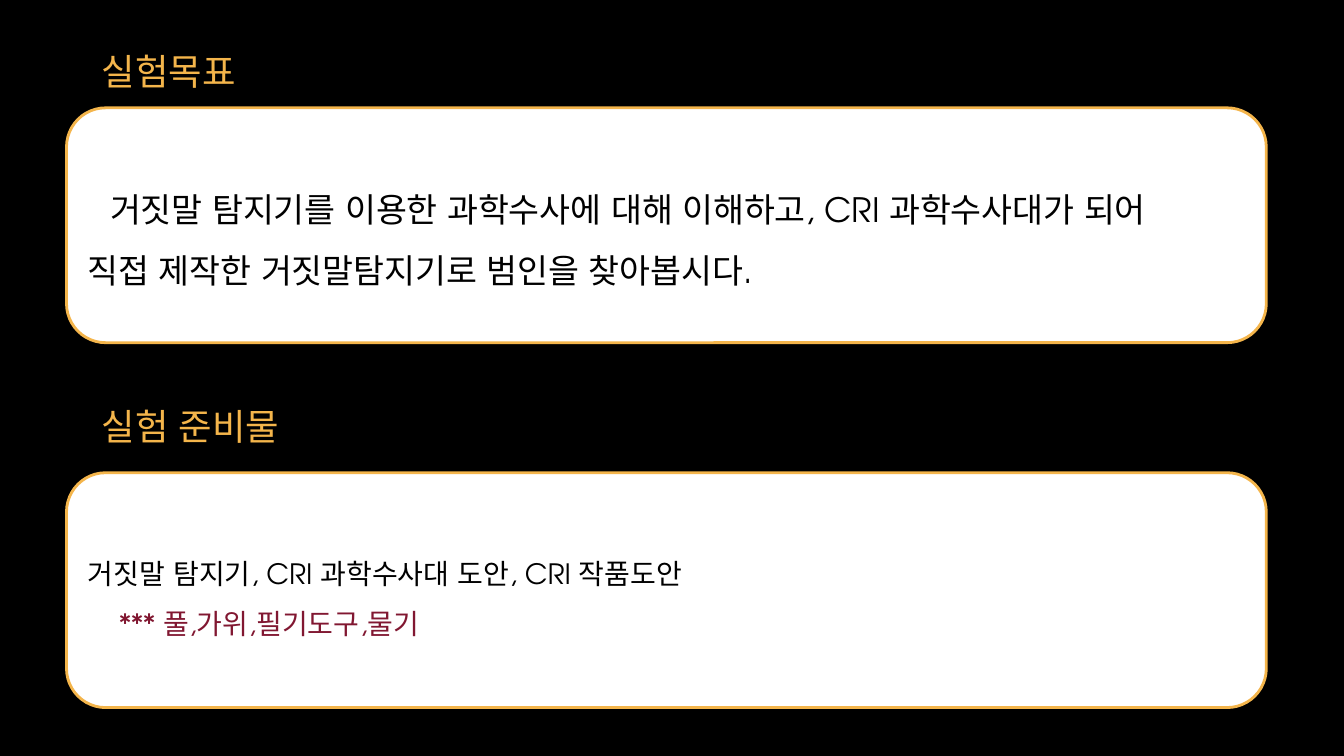
from lxml import etree
from pptx import Presentation
from pptx import util as u
from pptx.dml.color import RGBColor
from pptx.enum import shapes, text
from pptx.oxml.ns import qn

GOLD, WHITE, BLACK, WINE = "F4B54B", "FFFFFF", "000000", "811731"


def colour(value):
    return RGBColor.from_string(value)


def add_text(para, words, size=20, tint=BLACK, font="TeX Gyre Adventor",
             spacing=1.0, indent=0):
    """Write words into a paragraph; a newline becomes a line break."""
    para.alignment = text.PP_ALIGN.LEFT
    para.line_spacing = spacing
    if indent:
        para._p.get_or_add_pPr().set("indent", str(u.Inches(indent)))
    for number, line in enumerate(words.split("\n")):
        if number:
            para.add_line_break()
        span = para.add_run()
        span.text = line
        span.font.size = u.Pt(size)
        span.font.name = font
        span.font.color.rgb = colour(tint)
        # Korean letters use the same font setting
        east = etree.SubElement(span.font._element, qn("a:ea"))
        east.set("typeface", font)


class Slide:
    """Holds the slide's style and its current page."""
    left, width, height = 0.66, 11.9, 2.33

    def __init__(self, deck):
        self.page = deck.slides.add_slide(deck.slide_layouts[5])
        self.page.background.fill.solid()
        self.page.background.fill.fore_color.rgb = colour(BLACK)

    def heading(self, words, top, width, title=False):
        place = [u.Inches(n) for n in (0.91, top, width, 0.48)]
        if title:
            box = self.page.shapes.title
            box.left, box.top, box.width, box.height = place
        else:
            box = self.page.shapes.add_textbox(*place)
        frame = box.text_frame
        frame.word_wrap = True
        frame.auto_size = text.MSO_AUTO_SIZE.NONE
        frame.vertical_anchor = text.MSO_ANCHOR.TOP
        frame.margin_left = frame.margin_right = u.Inches(0.1)
        frame.margin_top = frame.margin_bottom = u.Inches(0.1)
        add_text(frame.paragraphs[0], words, size=26, tint=GOLD)

    def panel(self, top, lines, inset=0.05):
        box = self.page.shapes.add_shape(
            shapes.MSO_SHAPE.ROUNDED_RECTANGLE, u.Inches(self.left),
            u.Inches(top), u.Inches(self.width), u.Inches(self.height))
        box.shadow.inherit = False
        box.fill.solid()
        box.fill.fore_color.rgb = colour(WHITE)
        box.line.color.rgb = colour(GOLD)
        box.line.width = u.Pt(2)
        frame = box.text_frame
        frame.word_wrap = True
        frame.vertical_anchor = text.MSO_ANCHOR.MIDDLE
        frame.margin_top = u.Inches(inset)
        for number, (words, style) in enumerate(lines):
            para = frame.add_paragraph() if number else frame.paragraphs[0]
            add_text(para, words, spacing=1.5, **style)


def main():
    deck = Presentation()
    deck.slide_width, deck.slide_height = u.Inches(13.33), u.Inches(7.5)
    slide = Slide(deck)

    # Goal of the experiment
    slide.heading("실험목표", 0.39, 1.96, title=True)
    goal = ("거짓말 탐지기를 이용한 과학수사에 대해 이해하고, CRI 과학수사대가 되어\n"
            "직접 제작한 거짓말탐지기로 범인을 찾아봅시다.")
    slide.panel(1.07, [(goal, dict(size=24, indent=0.22))], inset=0.13)

    # Materials
    slide.heading("실험 준비물", 3.91, 2.3)
    slide.panel(4.69, [
        ("거짓말 탐지기, CRI 과학수사대 도안, CRI 작품도안", {}),
        ("*** 풀,가위,필기도구,물기", dict(tint=WINE, indent=0.31)),
    ])

    deck.save("out.pptx")


if __name__ == "__main__":
    main()
